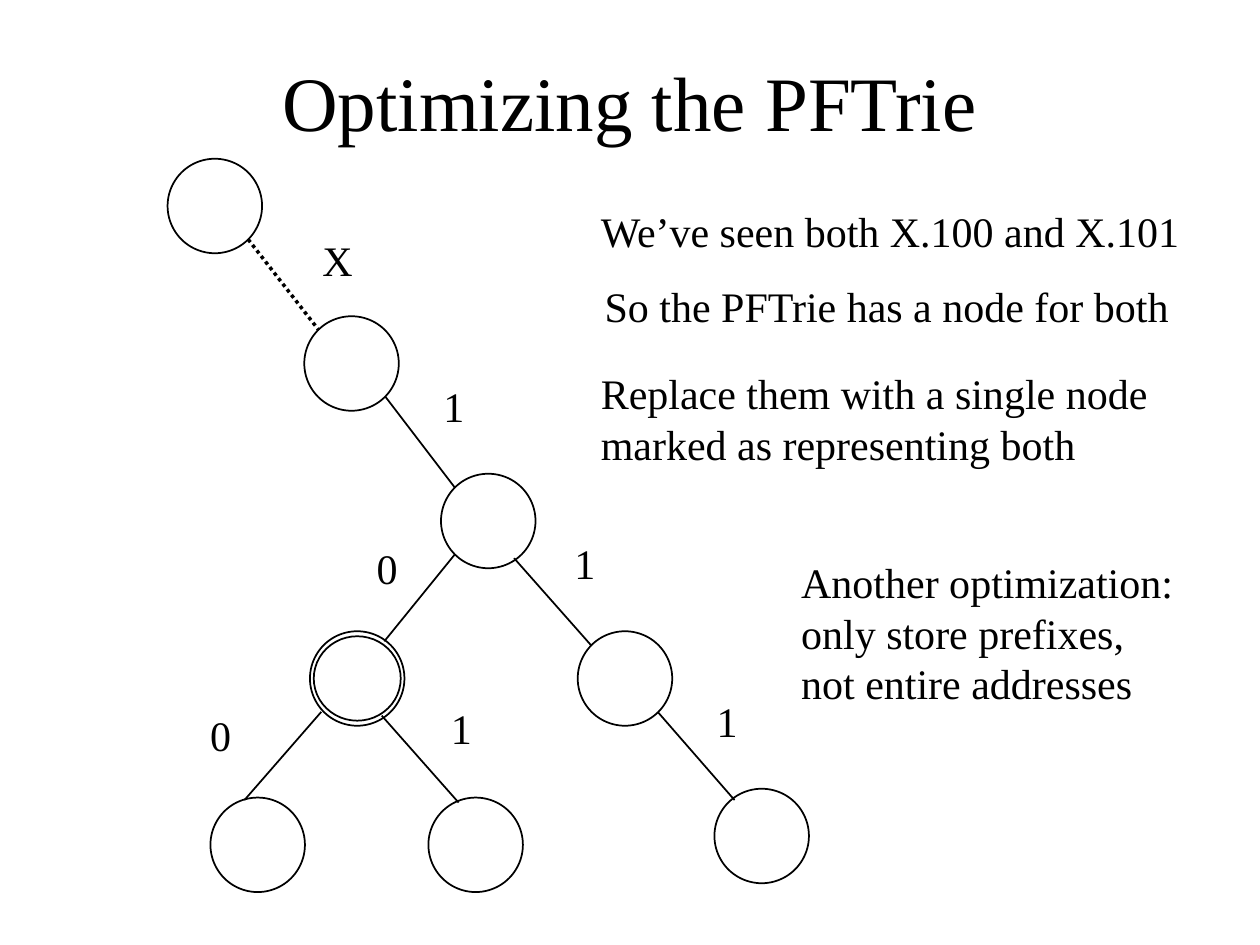
from lxml import etree
from pptx import Presentation
from pptx.dml.color import RGBColor
from pptx.enum.dml import MSO_LINE
from pptx.enum.shapes import MSO_CONNECTOR, MSO_SHAPE
from pptx.enum.text import MSO_ANCHOR, MSO_AUTO_SIZE, PP_ALIGN
from pptx.oxml.ns import qn
from pptx.util import Inches, Pt

COLORS = {"ink": "000000", "paper": "FFFFFF"}
FONT = "Times New Roman"
NODE_SIZE = 0.75
LEVEL_STEP = (1.085, 1.25)  # offset from one node of the main path to the next


def rgb(name):
    return RGBColor.from_string(COLORS[name])


def add_text(slide, text, left, top, width, height, size=24, wrap=False):
    shape = slide.shapes.add_textbox(
        Inches(left), Inches(top), Inches(width), Inches(height))
    frame = shape.text_frame
    frame.word_wrap = wrap
    frame.auto_size = MSO_AUTO_SIZE.SHAPE_TO_FIT_TEXT
    run = frame.paragraphs[0].add_run()
    run.text = text
    run.font.name = FONT
    run.font.size = Pt(size)
    run.font.color.rgb = rgb("ink")
    return shape


def add_circle(slide, left, top, width=NODE_SIZE, height=NODE_SIZE):
    shape = slide.shapes.add_shape(
        MSO_SHAPE.OVAL, Inches(left), Inches(top), Inches(width), Inches(height))
    shape.shadow.inherit = False
    shape.fill.background()
    shape.line.color.rgb = rgb("ink")
    shape.line.width = Pt(1)


def add_edge(slide, start, end, dotted=False):
    connector = slide.shapes.add_connector(
        MSO_CONNECTOR.STRAIGHT, *(Inches(value) for value in (*start, *end)))
    connector.line.color.rgb = rgb("ink")
    connector.line.width = Pt(2 if dotted else 1)
    if dotted:
        connector.line.dash_style = MSO_LINE.ROUND_DOT
    etree.SubElement(connector._element.spPr, qn("a:effectLst"))


def add_title(slide, left, top, width, height):
    shape = add_text(slide, "Optimizing the PFTrie", left, top, width, height,
                     size=44, wrap=True)
    frame = shape.text_frame
    frame.auto_size = MSO_AUTO_SIZE.NONE
    frame.vertical_anchor = MSO_ANCHOR.MIDDLE
    frame.paragraphs[0].alignment = PP_ALIGN.CENTER


def add_trie(slide, left, top):
    def at(x, y):
        return left + x, top + y

    # Nodes: main path, then the left branch and its two leaves
    step_x, step_y = LEVEL_STEP
    main_path = [(level * step_x, level * step_y) for level in range(5)]
    branch = [(1.13, 3.75), (2.07, 5.07), (0.34, 5.07)]
    for node in main_path + branch:
        add_circle(slide, *at(*node))

    # Inner ring marks the node that stands for both leaves
    add_circle(slide, *at(1.16, 3.79), 0.69, 0.67)

    # Edges: start, end, label, label position, label width
    edges = [
        ((0.64, 0.64), (1.2, 1.36), "X", (1.13, 0.55), 0.45),
        ((1.73, 1.89), (2.28, 2.61), "1", (2.09, 1.71), 0.37),
        ((2.75, 3.17), (3.36, 3.86), "1", (3.13, 2.96), 0.37),
        ((3.89, 4.39), (4.5, 5.09), "1", (4.26, 4.21), 0.37),
        ((2.28, 3.14), (1.72, 3.83), "0", (1.56, 3.0), 0.37),
        ((1.7, 4.42), (2.31, 5.11), "1", (2.15, 4.27), 0.37),
        ((1.22, 4.39), (0.61, 5.09), "0", (0.24, 4.32), 0.37),
    ]
    for start, end, label, label_position, width in edges:
        add_edge(slide, at(*start), at(*end), dotted=label == "X")
        add_text(slide, label, *at(*label_position), width, 0.5)


def add_notes_column(slide, left, top):
    # Text, offset, size, wrapping
    remarks = [
        ("We’ve seen both X.100 and X.101", 0, 0, 4.84, 0.5, False),
        ("So the PFTrie has a node for both", 0.03, 0.6, 4.72, 0.5, False),
        ("Replace them with a single node marked as representing both",
         0, 1.29, 4.76, 0.91, True),
        ("Another optimization: only store prefixes, not entire addresses",
         1.59, 2.79, 3.25, 1.31, True),
    ]
    for text, x, y, width, height, wrap in remarks:
        add_text(slide, text, left + x, top + y, width, height, wrap=wrap)


def main():
    presentation = Presentation()
    presentation.slide_width = Inches(10)
    presentation.slide_height = Inches(7.5)
    slide = presentation.slides.add_slide(presentation.slide_layouts[6])
    slide.background.fill.solid()
    slide.background.fill.fore_color.rgb = rgb("paper")

    add_title(slide, 0.75, 0.17, 8.5, 1.25)
    add_trie(slide, 1.33, 1.26)
    add_notes_column(slide, 4.67, 1.58)
    presentation.save("out.pptx")


if __name__ == "__main__":
    main()
